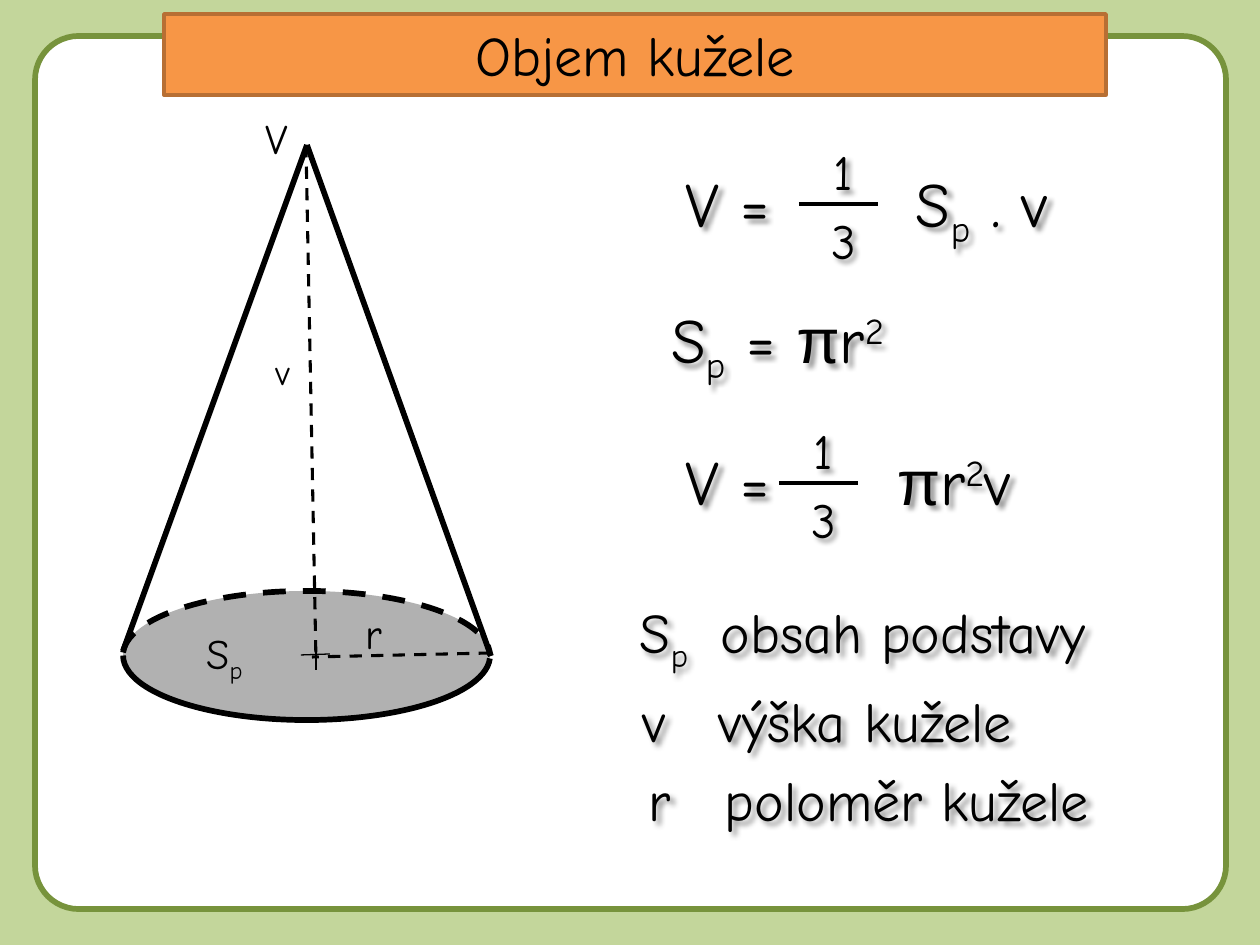
from lxml import etree
from pptx import Presentation
from pptx.dml.color import RGBColor
from pptx.enum.dml import MSO_LINE
from pptx.enum.shapes import MSO_CONNECTOR, MSO_SHAPE
from pptx.enum.text import MSO_ANCHOR, MSO_AUTO_SIZE, PP_ALIGN
from pptx.oxml import parse_xml
from pptx.oxml.ns import nsdecls, qn
from pptx.util import Pt

EMU_PER_PX = 914400 / 126
FONT = "Comic Neue"
SYMBOL_FONT = "Arial"
SUB, SUPER = -25, 30

# Content: text runs are (text, baseline shift in percent)
TITLE = "Objem kužele"
BASE_AREA = [("S", 0), ("p", SUB)]

# box (left, top, width, height), text start, tab position, size, runs
TABBED_LINES = [
    ((610, 158, 515, 89), 686, 916, 36,
     [("V =\tS", 0), ("p", SUB), (" . v", 0)]),
    ((591, 436, 515, 89), 686, 897, 36,
     [("V =\t", 0), ("π", 0), ("r", 0), ("2", SUPER), ("v", 0)]),
    ((600, 591, 525, 81), 640, 721, 32,
     BASE_AREA + [("\tobsah podstavy", 0)]),
    ((571, 680, 515, 81), 643, 719, 32, [("v\tvýška kužele", 0)]),
    ((610, 759, 515, 81), 649, 725, 32, [("r\tpoloměr kužele", 0)]),
]
CIRCLE_AREA = BASE_AREA + [(" = ", 0), ("π", 0), ("r", 0), ("2", SUPER)]
FRACTION_BARS = [(799, 204), (779, 483)]  # left, y

CONE_LABELS = [
    ((263, 344, 49, 55), 20, [("v", 0)]),
    ((253, 106, 79, 63), 24, [("V", 0)]),
    ((194, 621, 79, 63), 24, BASE_AREA),
    ((353, 601, 79, 63), 24, [("r", 0)]),
]
CONE_BASE = (123, 591, 367, 129)
# from x, from y, to x, to y, width, dashed
CONE_LINES = [
    (316, 641, 316, 670, 0.75, False),
    (301, 655, 330, 654, 0.75, False),
    (491, 656, 307, 145, 3.25, False),
    (123, 651, 307, 145, 3.25, False),
    (306, 145, 316, 661, 1.75, True),
    (491, 653, 312, 657, 1.75, True),
]


def px(value):
    return round(value * EMU_PER_PX)


def color(hex_string):
    return RGBColor.from_string(hex_string)


def set_line(line, hex_string, width, dashed=False):
    line.color.rgb = color(hex_string)
    line.width = Pt(width)
    if dashed:
        line.dash_style = MSO_LINE.DASH


def format_run(run, size, shift=0):
    run.font.size = Pt(size)
    run.font.name = SYMBOL_FONT if run.text == "π" else FONT
    run.font.color.rgb = color("000000")
    if shift:
        run._r.get_or_add_rPr().set("baseline", str(shift * 1000))


def add_shape(slide, kind, box, fill=None, adjustment=None):
    shape = slide.shapes.add_shape(kind, *map(px, box))
    shape.shadow.inherit = False
    if fill:
        shape.fill.solid()
        shape.fill.fore_color.rgb = color(fill)
    else:
        shape.fill.background()
    if adjustment is not None:
        shape.adjustments[0] = adjustment
    return shape


def add_line(slide, x1, y1, x2, y2, width, dashed=False):
    connector = slide.shapes.add_connector(
        MSO_CONNECTOR.STRAIGHT, px(x1), px(y1), px(x2), px(y2))
    set_line(connector.line, "000000", width, dashed)
    etree.SubElement(connector.element.spPr, qn("a:effectLst"))


def add_text(slide, box, size, runs, align=PP_ALIGN.LEFT, shadow=False):
    text_box = slide.shapes.add_textbox(*map(px, box))
    frame = text_box.text_frame
    frame.word_wrap = True
    frame.auto_size = MSO_AUTO_SIZE.SHAPE_TO_FIT_TEXT
    paragraph = frame.paragraphs[0]
    paragraph.alignment = align
    for text, shift in runs:
        run = paragraph.add_run()
        run.text = text
        format_run(run, size, shift)
    if shadow:
        text_box.element.spPr.append(parse_xml(
            f'<a:effectLst {nsdecls("a")}>'
            '<a:outerShdw blurRad="38100" dist="38100" dir="2700000">'
            '<a:srgbClr val="000000"><a:alpha val="43000"/></a:srgbClr>'
            '</a:outerShdw></a:effectLst>'))
    return text_box


def add_tabbed_line(slide, box, start, tab, size, runs):
    text_box = add_text(slide, box, size, runs, shadow=True)
    frame = text_box.text_frame
    frame.margin_left = px(start - box[0])
    frame.margin_right = 0
    properties = frame.paragraphs[0]._p.get_or_add_pPr()
    tabs = etree.SubElement(properties, qn("a:tabLst"))
    etree.SubElement(tabs, qn("a:tab"), pos=str(px(tab - start)), algn="l")


def add_fraction(slide, left, y):
    for text, top in (("1", y - 69), ("3", y)):
        add_text(slide, (left + 10, top, 69, 72), 28, [(text, 0)],
                 PP_ALIGN.CENTER, shadow=True)
    add_line(slide, left, y, left + 79, y, 2)


def add_title(slide):
    title = slide.shapes.title
    title.left, title.top, title.width, title.height = map(
        px, (164, 14, 942, 81))
    title.fill.solid()
    title.fill.fore_color.rgb = color("F79646")
    set_line(title.line, "B76F34", 2)
    frame = title.text_frame
    frame.text = TITLE
    frame.vertical_anchor = MSO_ANCHOR.MIDDLE
    frame.paragraphs[0].alignment = PP_ALIGN.CENTER
    format_run(frame.paragraphs[0].runs[0], 32)
    return title


def add_cone(slide):
    base = add_shape(slide, MSO_SHAPE.OVAL, CONE_BASE, "808080")
    base.line.fill.background()
    fill_color = base.element.spPr.find(qn("a:solidFill"))[0]
    etree.SubElement(fill_color, qn("a:alpha"), val="61000")
    # Hidden back edge is dashed, front edge is solid
    for rotation, dashed in ((0, True), (180, False)):
        edge = add_shape(slide, MSO_SHAPE.ARC, CONE_BASE, adjustment=108.54)
        edge.adjustments[1] = 0
        edge.rotation = rotation
        set_line(edge.line, "000000", 3.25, dashed)
    for line in CONE_LINES:
        add_line(slide, *line)
    for box, size, runs in CONE_LABELS:
        add_text(slide, box, size, runs)


def main():
    presentation = Presentation()
    presentation.slide_width = px(1260)
    presentation.slide_height = px(945)
    slide = presentation.slides.add_slide(presentation.slide_layouts[5])
    slide.background.fill.solid()
    slide.background.fill.fore_color.rgb = color("C3D69B")

    # White panel behind the title
    title = add_title(slide)
    panel = add_shape(slide, MSO_SHAPE.ROUNDED_RECTANGLE,
                      (35, 36, 1191, 873), "FFFFFF", 0.05)
    set_line(panel.line, "77933C", 3.25)
    title.element.addprevious(panel.element)

    add_cone(slide)

    # Formulas and legend
    for line in TABBED_LINES:
        add_tabbed_line(slide, *line)
    add_text(slide, (520, 294, 515, 89), 36, CIRCLE_AREA,
             PP_ALIGN.CENTER, shadow=True)
    for left, y in FRACTION_BARS:
        add_fraction(slide, left, y)

    presentation.save("out.pptx")


if __name__ == "__main__":
    main()
